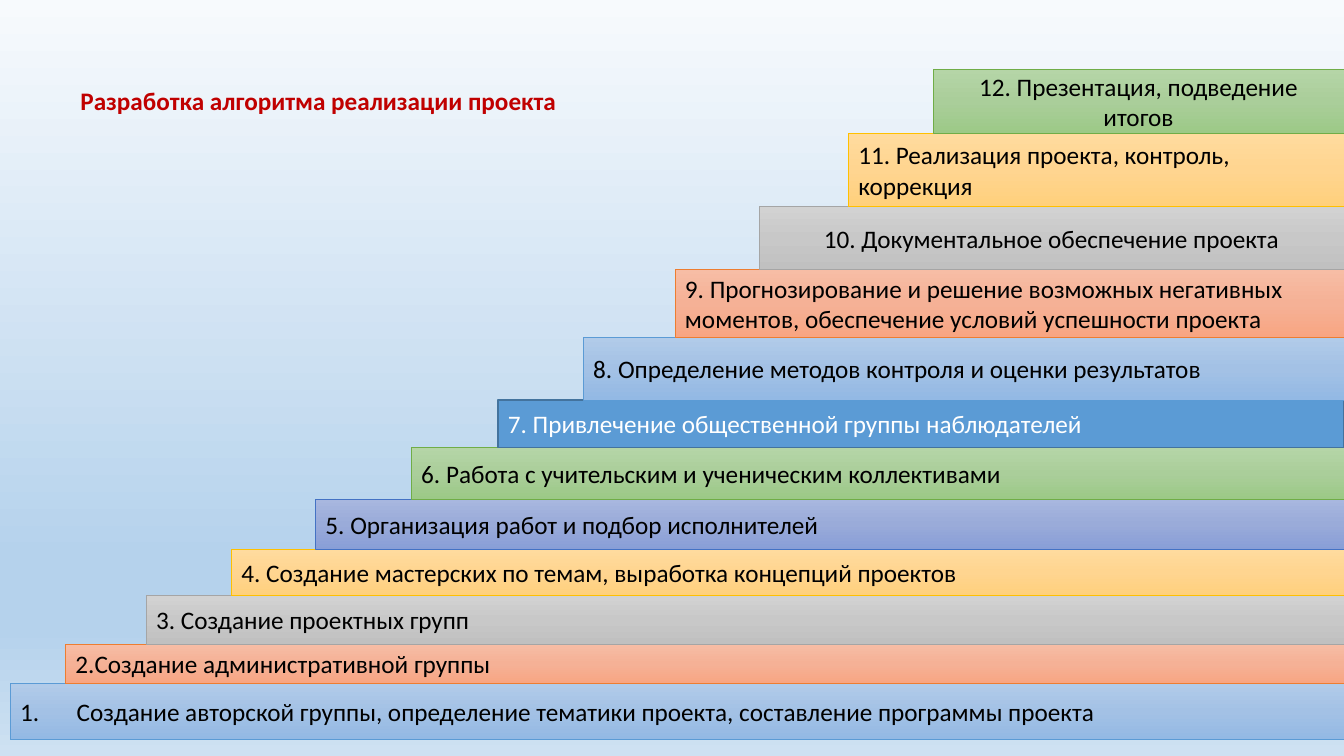
from lxml.etree import SubElement
from pptx import Presentation
from pptx.dml.color import RGBColor
from pptx.enum.shapes import MSO_SHAPE
from pptx.enum.text import MSO_ANCHOR, MSO_AUTO_SIZE, PP_ALIGN
from pptx.oxml.ns import qn
from pptx.util import Pt

SLIDE_WIDTH, SLIDE_HEIGHT = 960, 540
STAIR_BOTTOM = 528.5

# Gradient stops of each step colour, followed by its outline
BLUE = [(0, "B1CBE9"), (50, "A3C1E5"), (100, "93B9E4")], "5B9BD5"
ORANGE = [(0, "F7BDA5"), (50, "F5B196"), (100, "F8A582")], "ED7D31"
GRAY = [(0, "D2D2D2"), (50, "C8C8C8"), (100, "C0C0C0")], "A5A5A5"
YELLOW = [(0, "FFDB9E"), (50, "FFD590"), (100, "FFD07C")], "FFC000"
INDIGO = [(0, "A8B7DF"), (50, "9AABD9"), (100, "889ED7")], "4472C4"
GREEN = [(0, "B5D5A7"), (50, "AACE9A"), (100, "9CC987")], "70AD47"
SOLID_BLUE = "5B9BD5", "43739E"
SKY = [(0, "F7FAFD"), (74, "B5D2EC"), (83, "B5D2EC"), (100, "CEE1F2")]

# Steps from the bottom up: left, top, colours, text, alignment
LEFT, CENTER = PP_ALIGN.LEFT, PP_ALIGN.CENTER
STEPS = [
    (7.2, 488.2, BLUE, "Создание авторской группы, определение тематики проекта, "
     "составление программы проекта", LEFT),
    (46.8, 460, ORANGE, "2.Создание административной группы", LEFT),
    (104.4, 425.5, GRAY, "3. Создание проектных групп", LEFT),
    (165.4, 392.4, YELLOW, "4. Создание мастерских по темам, выработка концепций проектов", LEFT),
    (225.4, 356.4, INDIGO, "5. Организация работ и подбор исполнителей", LEFT),
    (293.8, 319.7, GREEN, "6. Работа с учительским и ученическим коллективами", LEFT),
    (355.7, 285.8, SOLID_BLUE, "7. Привлечение общественной группы наблюдателей", LEFT),
    (416.7, 241.2, BLUE, "8. Определение методов контроля и оценки результатов", LEFT),
    (482.2, 192.5, ORANGE, "9. Прогнозирование и решение возможных негативных моментов, "
     "обеспечение условий успешности проекта", LEFT),
    (542.2, 147.6, GRAY, "10. Документальное обеспечение проекта", CENTER),
    (606, 95.2, YELLOW, "11. Реализация проекта, контроль, коррекция", LEFT),
    (666.5, 49.7, GREEN, "12. Презентация, подведение итогов", CENTER),
]


def paint(fill, colour, owner=None):
    """Fill with one hex colour, or top to bottom with (percent, hex) stops."""
    if isinstance(colour, str):
        fill.solid()
        fill.fore_color.rgb = RGBColor.from_string(colour)
        return
    fill.gradient()
    fill.gradient_angle = 270
    stops = owner.find(".//" + qn("a:gsLst"))
    stops.clear()
    for percent, shade in colour:
        stop = SubElement(stops, qn("a:gs"), pos=str(percent * 1000))
        SubElement(stop, qn("a:srgbClr"), val=shade)


def write(box, text, colour="000000", bold=False, align=LEFT, wrap=True,
          anchor=MSO_ANCHOR.MIDDLE):
    frame = box.text_frame
    frame.word_wrap = wrap
    frame.vertical_anchor = anchor
    para = frame.paragraphs[0]
    para.alignment = align
    span = para.add_run()
    span.text = text
    span.font.name = "Calibri"
    span.font.size = Pt(18)
    span.font.bold = bold
    paint(span.font.fill, colour)
    return para


deck = Presentation()
deck.slide_width, deck.slide_height = Pt(SLIDE_WIDTH), Pt(SLIDE_HEIGHT)
page = deck.slides.add_slide(deck.slide_layouts[6])
paint(page.background.fill, SKY, page.element)

# Staircase: every step rests on the one below and runs to the right edge
floor = STAIR_BOTTOM
for number, (left, top, (body, outline), text, align) in enumerate(STEPS, 1):
    step = page.shapes.add_shape(MSO_SHAPE.RECTANGLE, Pt(left), Pt(top),
                                 Pt(SLIDE_WIDTH - left), Pt(floor - top))
    step.shadow.inherit = False
    solid = isinstance(body, str)
    paint(step.fill, body, step.element)
    paint(step.line.fill, outline)
    step.line.width = Pt(1 if solid else 0.5)
    para = write(step, text, colour="FFFFFF" if solid else "000000", align=align)
    floor = top

    # The first step carries an automatic number
    if number == 1:
        settings = para._p.get_or_add_pPr()
        settings.set("marL", str(Pt(40.5)))
        settings.set("indent", str(Pt(-40.5)))
        SubElement(settings, qn("a:buFont"), typeface="+mj-lt")
        SubElement(settings, qn("a:buAutoNum"), type="arabicPeriod")

# Title
title = page.shapes.add_textbox(Pt(50.4), Pt(57.6), Pt(357), Pt(29))
write(title, "Разработка алгоритма реализации проекта", colour="C00000",
      bold=True, wrap=False, anchor=MSO_ANCHOR.TOP)
title.text_frame.auto_size = MSO_AUTO_SIZE.SHAPE_TO_FIT_TEXT

deck.save("out.pptx")
